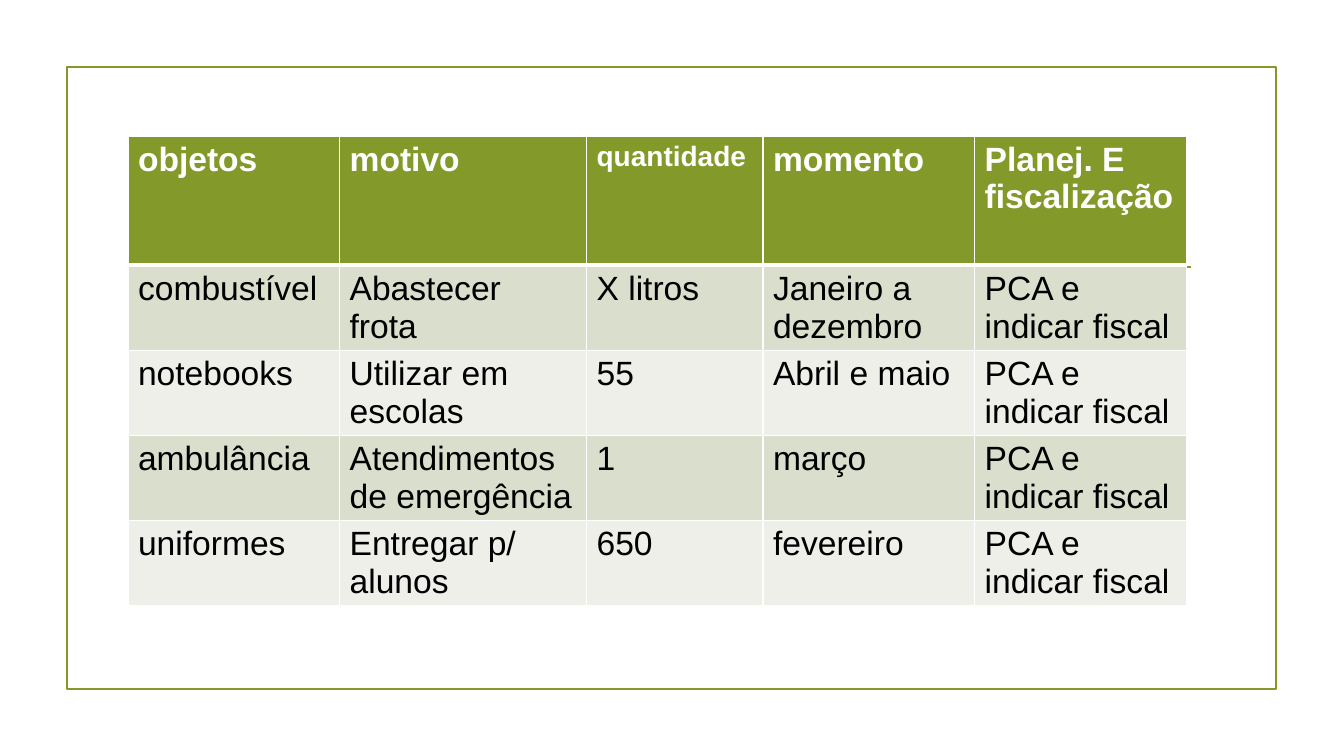
import pptx
import pptx.dml.color
import pptx.enum.shapes
import pptx.oxml
import pptx.oxml.ns
import pptx.util

Pt = pptx.util.Pt
GREEN, WHITE, BLACK = "83992A", "FFFFFF", "000000"
BANDS = ("D9DECD", "EDEFE8")
WIDTHS = (151.2, 176.4, 126, 151.2, 151.2)
HEAD, BODY = 92.2, 51.1
CHECK = "PCA e indicar fiscal"
ROWS = (
    ("objetos", "motivo", "quantidade", "momento", "Planej. E fiscalização"),
    ("combustível", "Abastecer frota", "X litros", "Janeiro a dezembro", CHECK),
    ("notebooks", "Utilizar em escolas", "55", "Abril e maio", CHECK),
    ("ambulância", "Atendimentos de emergência", "1", "março", CHECK),
    ("uniformes", "Entregar p/ alunos", "650", "fevereiro", CHECK),
)


def color(code):
    return pptx.dml.color.RGBColor.from_string(code)


def add_frame(slide, left, top, width, height):
    frame = slide.shapes.add_shape(
        pptx.enum.shapes.MSO_SHAPE.RECTANGLE,
        Pt(left), Pt(top), Pt(width), Pt(height))
    frame.shadow.inherit = False
    frame.fill.background()
    frame.line.color.rgb = color(GREEN)
    frame.line.width = Pt(1.25)


def add_rule(slide, left, right, y):
    rule = slide.shapes.add_connector(
        pptx.enum.shapes.MSO_CONNECTOR.STRAIGHT,
        Pt(left), Pt(y), Pt(right), Pt(y))
    rule.line.color.rgb = color(GREEN)
    rule.line.width = Pt(1.25)
    props = rule.element.spPr
    props.append(props.makeelement(pptx.oxml.ns.qn("a:effectLst"), {}))


def set_edge(cell, side, width):
    edge = pptx.oxml.parse_xml(
        f'<a:ln{side} {pptx.oxml.ns.nsdecls("a")} w="{Pt(width)}">'
        f'<a:solidFill><a:srgbClr val="{WHITE}"/></a:solidFill></a:ln{side}>')
    cell._tc.get_or_add_tcPr().append(edge)


def fill_cell(cell, text, row):
    head = row == 0
    edges = {"L": 1, "R": 1, "T": 3 if row == 1 else 1, "B": 3 if head else 1}
    for side, width in edges.items():
        set_edge(cell, side, width)
    cell.fill.solid()
    cell.fill.fore_color.rgb = color(GREEN if head else BANDS[(row - 1) % 2])
    run = cell.text_frame.paragraphs[0].add_run()
    run.text = text
    run.font.name = "Arial"
    run.font.size = Pt(20 if text == "quantidade" else 24)
    run.font.bold = head
    run.font.color.rgb = color(WHITE if head else BLACK)


def add_grid(slide, left, top, height):
    shape = slide.shapes.add_table(
        len(ROWS), len(WIDTHS), Pt(left), Pt(top), Pt(sum(WIDTHS)), Pt(height))
    table = shape.table
    for column, width in zip(table.columns, WIDTHS):
        column.width = Pt(width)
    for r, texts in enumerate(ROWS):
        table.rows[r].height = Pt(BODY if r else HEAD)
        for c, text in enumerate(texts):
            fill_cell(table.cell(r, c), text, r)
    shape.height = Pt(height)


def main():
    deck = pptx.Presentation()
    deck.slide_width, deck.slide_height = Pt(960), Pt(540)
    slide = deck.slides.add_slide(deck.slide_layouts[6])
    add_frame(slide, 47.7, 48, 864, 444.4)
    add_rule(slide, 110, 850.4, 190.8)
    add_grid(slide, 91.4, 97.2, 351.4)
    deck.save("out.pptx")


if __name__ == "__main__":
    main()
